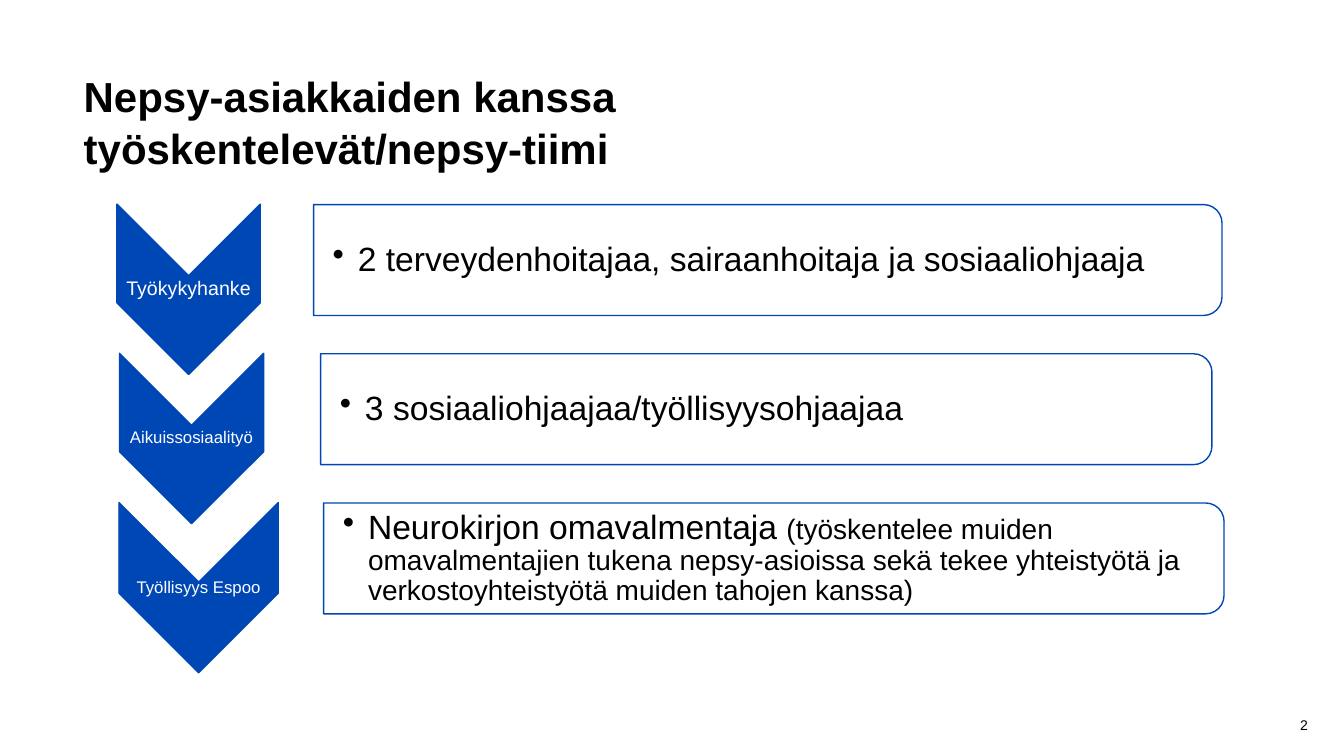
from dataclasses import dataclass

from lxml.etree import SubElement
from pptx import Presentation
from pptx.dml.color import RGBColor
from pptx.enum.shapes import MSO_SHAPE as Preset
from pptx.enum.text import MSO_ANCHOR as Anchor, PP_ALIGN as Align
from pptx.oxml.ns import qn
from pptx.util import Inches, Pt

BLUE, WHITE, BLACK = "0047B6", "FFFFFF", "000000"
FONT = "Arial"
FIRST_CENTRE, ROW_PITCH = 2.58, 1.48
CHEVRON_DROP, CHEVRON_LENGTH = 0.29, 1.69
PANEL_HEIGHT, PANEL_TEXT_HEIGHT, LABEL_HEIGHT = 1.1, 0.99, 0.27


@dataclass
class TeamRow:
    label: str
    label_size: int
    chevron_centre: float
    chevron_width: float
    panel_left: float
    panel_width: float
    members: str
    detail: str = ""


ROWS = [
    TeamRow("Työkykyhanke", 14, 1.87, 1.42, 3.11, 9.01,
            "2 terveydenhoitajaa, sairaanhoitaja ja sosiaaliohjaaja"),
    TeamRow("Aikuissosiaalityö", 12, 1.9, 1.43, 3.18, 8.84,
            "3 sosiaaliohjaajaa/työllisyysohjaajaa"),
    TeamRow("Työllisyys Espoo", 12, 1.97, 1.58, 3.21, 8.93,
            "Neurokirjon omavalmentaja ",
            "(työskentelee muiden omavalmentajien tukena nepsy-asioissa sekä "
            "tekee yhteistyötä ja verkostoyhteistyötä muiden tahojen kanssa)"),
]


def color(hex_value: str) -> RGBColor:
    return RGBColor.from_string(hex_value)


def set_font(paragraph, size: int, hex_value: str, bold: bool = False) -> None:
    font = paragraph.font
    font.name, font.size, font.bold = FONT, Pt(size), bold
    font.color.rgb = color(hex_value)


def set_frame(frame, anchor: Anchor, left: float = 0, other: float = 0) -> None:
    frame.word_wrap = True
    frame.vertical_anchor = anchor
    frame.margin_left = Inches(left)
    frame.margin_top = frame.margin_right = frame.margin_bottom = Inches(other)


def add_turned_shape(slide, preset: Preset, centre_x: float, centre_y: float,
                     length: float, breadth: float, fill: str):
    shape = slide.shapes.add_shape(
        preset, Inches(centre_x - length / 2), Inches(centre_y - breadth / 2),
        Inches(length), Inches(breadth))
    shape.rotation = 90
    shape.shadow.inherit = False
    shape.fill.solid()
    shape.fill.fore_color.rgb = color(fill)
    shape.line.color.rgb = color(BLUE)
    shape.line.width = Pt(1)
    return shape


def add_text(slide, left: float, top: float, width: float, height: float,
             left_inset: float, inset: float):
    box = slide.shapes.add_textbox(
        Inches(left), Inches(top), Inches(width), Inches(height))
    set_frame(box.text_frame, Anchor.MIDDLE, left_inset, inset)
    return box.text_frame.paragraphs[0]


def add_bullet(paragraph, indent: float) -> None:
    properties = paragraph._p.get_or_add_pPr()
    properties.set("marL", str(Inches(indent)))
    properties.set("indent", str(-Inches(indent)))
    SubElement(properties, qn("a:buChar")).set("char", "•")


def add_chevron(slide, row: TeamRow, centre_y: float) -> None:
    add_turned_shape(slide, Preset.CHEVRON, row.chevron_centre, centre_y,
                     CHEVRON_LENGTH, row.chevron_width, BLUE)
    paragraph = add_text(slide, row.chevron_centre - row.chevron_width / 2,
                         centre_y - LABEL_HEIGHT / 2, row.chevron_width,
                         LABEL_HEIGHT, 0.01, 0.01)
    paragraph.text = row.label
    paragraph.alignment = Align.CENTER
    paragraph.line_spacing = 0.9
    set_font(paragraph, row.label_size, WHITE)


def add_panel(slide, row: TeamRow, centre_y: float) -> None:
    panel = add_turned_shape(
        slide, Preset.ROUND_2_SAME_RECTANGLE,
        row.panel_left + row.panel_width / 2, centre_y,
        PANEL_HEIGHT, row.panel_width, WHITE)
    fill_color = panel._element.spPr.find(qn("a:solidFill"))[0]
    SubElement(fill_color, qn("a:alpha")).set("val", "90000")
    paragraph = add_text(slide, row.panel_left, centre_y - PANEL_TEXT_HEIGHT / 2,
                         row.panel_width - 0.05, PANEL_TEXT_HEIGHT, 0.19, 0.02)
    paragraph.line_spacing = 0.9
    add_bullet(paragraph, 0.25)
    set_font(paragraph, 24, BLACK)
    paragraph.add_run().text = row.members
    if row.detail:
        detail = paragraph.add_run()
        detail.text = row.detail
        detail.font.size = Pt(20)


def add_title(slide) -> None:
    title = slide.shapes.title
    title.left, title.top = Inches(0.83), Inches(0.67)
    title.width, title.height = Inches(9.22), Inches(1.15)
    set_frame(title.text_frame, Anchor.TOP)
    paragraph = title.text_frame.paragraphs[0]
    paragraph.text = "Nepsy-asiakkaiden kanssa työskentelevät/nepsy-tiimi"
    paragraph.alignment = Align.LEFT
    paragraph.line_spacing = 1.05
    set_font(paragraph, 30, BLACK, bold=True)


def add_slide_number(slide) -> None:
    paragraph = add_text(slide, 12.02, 7.03, 0.95, 0.32, 0, 0)
    paragraph.text = "2"
    paragraph.alignment = Align.RIGHT
    set_font(paragraph, 10, BLACK)


def main() -> None:
    presentation = Presentation()
    presentation.slide_width = Inches(13.33)
    presentation.slide_height = Inches(7.5)
    slide = presentation.slides.add_slide(
        presentation.slide_layouts.get_by_name("Title Only"))
    add_title(slide)
    for index, row in enumerate(ROWS):
        centre_y = FIRST_CENTRE + index * ROW_PITCH
        add_chevron(slide, row, centre_y + CHEVRON_DROP)
        add_panel(slide, row, centre_y)
    add_slide_number(slide)
    presentation.save("out.pptx")


if __name__ == "__main__":
    main()
